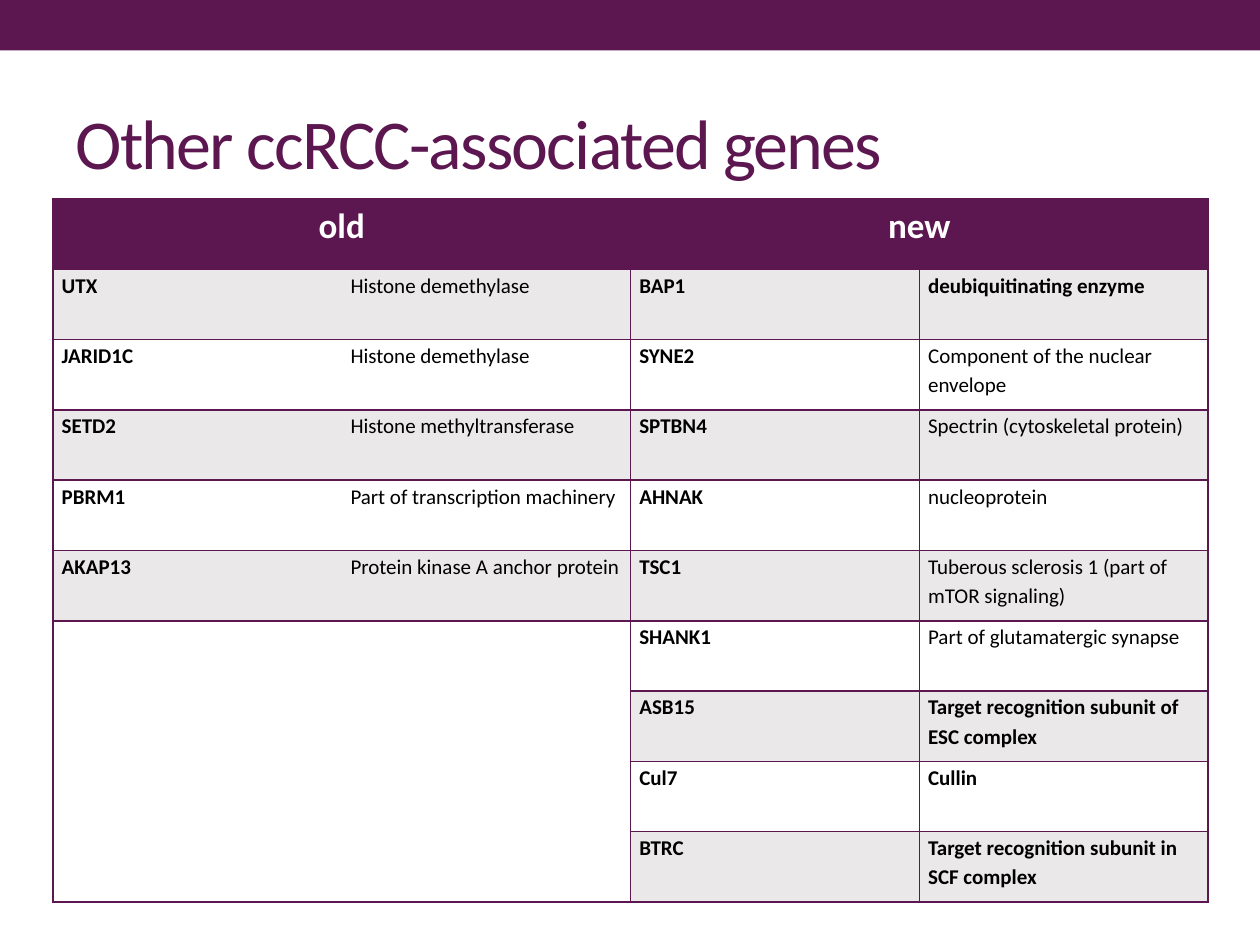
"""Build a slide with a table of old and new ccRCC-associated genes."""
from typing import NamedTuple

from lxml import etree
from pptx import Presentation
from pptx import util as u
from pptx.dml.color import RGBColor
from pptx.enum import shapes, text
from pptx.oxml.ns import qn

PLUM = RGBColor(0x5D, 0x17, 0x50)
BAND = RGBColor(0xEA, 0xE8, 0xE9)
WHITE = RGBColor(0xFF, 0xFF, 0xFF)
BLACK = RGBColor(0, 0, 0)
FONT = "Calibri"
WIDTH, HEIGHT = u.Inches(10), u.Inches(7.5)
ROWS, COLUMNS = 10, 4
ROW_HEIGHT = u.Inches(5.58) // ROWS
COLUMN_WIDTH = u.Inches(9.17) // COLUMNS
PLAIN_STYLE = "{2D5ABB26-0587-4C30-8999-92F81FD0307C}"


class Gene(NamedTuple):
    """A gene, what it does, and whether that is emphasised."""
    name: str
    role: str
    strong: bool = False


OLD_GENES = [
    Gene("UTX", "Histone demethylase"),
    Gene("JARID1C", "Histone demethylase"),
    Gene("SETD2", "Histone methyltransferase"),
    Gene("PBRM1", "Part of transcription machinery"),
    Gene("AKAP13", "Protein kinase A anchor protein"),
]
NEW_GENES = [
    Gene("BAP1", "deubiquitinating enzyme", True),
    Gene("SYNE2", "Component of the nuclear envelope"),
    Gene("SPTBN4", "Spectrin (cytoskeletal protein)"),
    Gene("AHNAK", "nucleoprotein"),
    Gene("TSC1", "Tuberous sclerosis 1 (part of mTOR signaling)"),
    Gene("SHANK1", "Part of glutamatergic synapse"),
    Gene("ASB15", "Target recognition subunit of ESC complex", True),
    Gene("Cul7", "Cullin", True),
    Gene("BTRC", "Target recognition subunit in SCF complex", True),
]


def format_text(paragraph, size: float, color: RGBColor, bold: bool) -> None:
    for run in paragraph.runs:
        run.font.name = FONT
        run.font.size = u.Pt(size)
        run.font.bold = bold
        run.font.color.rgb = color


def add_border(cell, sides: str) -> None:
    properties = cell._tc.get_or_add_tcPr()
    for side in sides:
        line = etree.SubElement(properties, qn(f"a:ln{side}"), w=str(u.Pt(1)))
        fill = etree.SubElement(line, qn("a:solidFill"))
        etree.SubElement(fill, qn("a:srgbClr"), val=str(PLUM))


def paint_cell(cell, fill: RGBColor, sides: str) -> None:
    add_border(cell, sides)
    cell.fill.solid()
    cell.fill.fore_color.rgb = fill


def write_cell(cell, words: str, size: float, color: RGBColor, bold: bool) -> None:
    cell.margin_left = cell.margin_right = u.Inches(0.07)
    cell.margin_top = cell.margin_bottom = 0
    cell.text_frame.text = words
    paragraph = cell.text_frame.paragraphs[0]
    paragraph.line_spacing = 1.15
    format_text(paragraph, size, color, bold)


def fill_group(table, column: int, heading: str, genes: list[Gene], name_sides: str) -> None:
    header = table.cell(0, column)
    header.merge(table.cell(0, column + 1))
    paint_cell(header, PLUM, "LRTB")
    write_cell(header, heading, 20, WHITE, True)
    header.text_frame.paragraphs[0].alignment = text.PP_ALIGN.CENTER
    for row, gene in enumerate(genes, start=1):
        name, role = table.cell(row, column), table.cell(row, column + 1)
        fill = BAND if row % 2 else WHITE
        paint_cell(name, fill, name_sides)
        paint_cell(role, fill, "RTB")
        write_cell(name, gene.name, 12, BLACK, True)
        write_cell(role, gene.role, 12, BLACK, gene.strong)


def add_gene_table(slide) -> None:
    table = slide.shapes.add_table(
        ROWS, COLUMNS, u.Inches(0.42), u.Inches(1.58),
        COLUMN_WIDTH * COLUMNS, ROW_HEIGHT * ROWS).table
    table._tbl.tblPr.find(qn("a:tableStyleId")).text = PLAIN_STYLE
    fill_group(table, 0, "old", OLD_GENES, "LTB")
    fill_group(table, 2, "new", NEW_GENES, "LRTB")
    blank = table.cell(len(OLD_GENES) + 1, 0)
    blank.merge(table.cell(ROWS - 1, 1))
    paint_cell(blank, WHITE, "LRTB")


def add_top_bar(slide) -> None:
    bar = slide.shapes.add_shape(
        shapes.MSO_SHAPE.RECTANGLE, 0, 0, WIDTH, u.Inches(0.4))
    bar.shadow.inherit = False
    bar.fill.solid()
    bar.fill.fore_color.rgb = PLUM
    bar.line.fill.background()


def set_title(slide, words: str) -> None:
    title = slide.shapes.title
    title.left, title.top = int(WIDTH * 0.05), u.Inches(0.58)
    title.width, title.height = int(WIDTH * 0.9), u.Inches(1.08)
    frame = title.text_frame
    frame.text = words
    frame.auto_size = text.MSO_AUTO_SIZE.NONE
    frame.vertical_anchor = text.MSO_ANCHOR.MIDDLE
    paragraph = frame.paragraphs[0]
    paragraph.alignment = text.PP_ALIGN.LEFT
    format_text(paragraph, 40, PLUM, False)
    paragraph.runs[0].font._element.set("spc", "-100")


def main() -> None:
    presentation = Presentation()
    presentation.slide_width, presentation.slide_height = WIDTH, HEIGHT
    slide = presentation.slides.add_slide(presentation.slide_layouts[5])
    add_top_bar(slide)
    set_title(slide, "Other ccRCC-associated genes")
    add_gene_table(slide)
    presentation.save("out.pptx")


if __name__ == "__main__":
    main()
